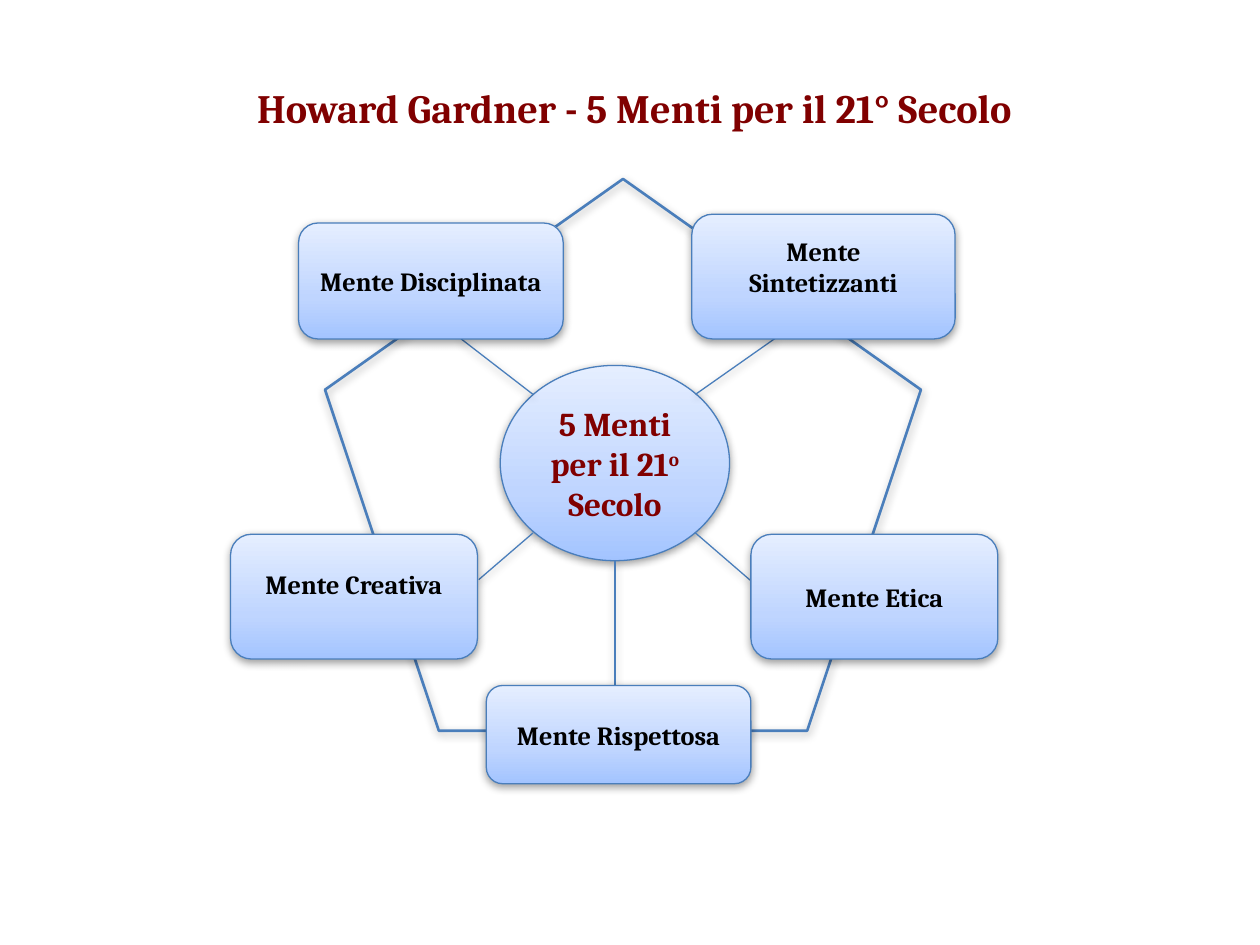
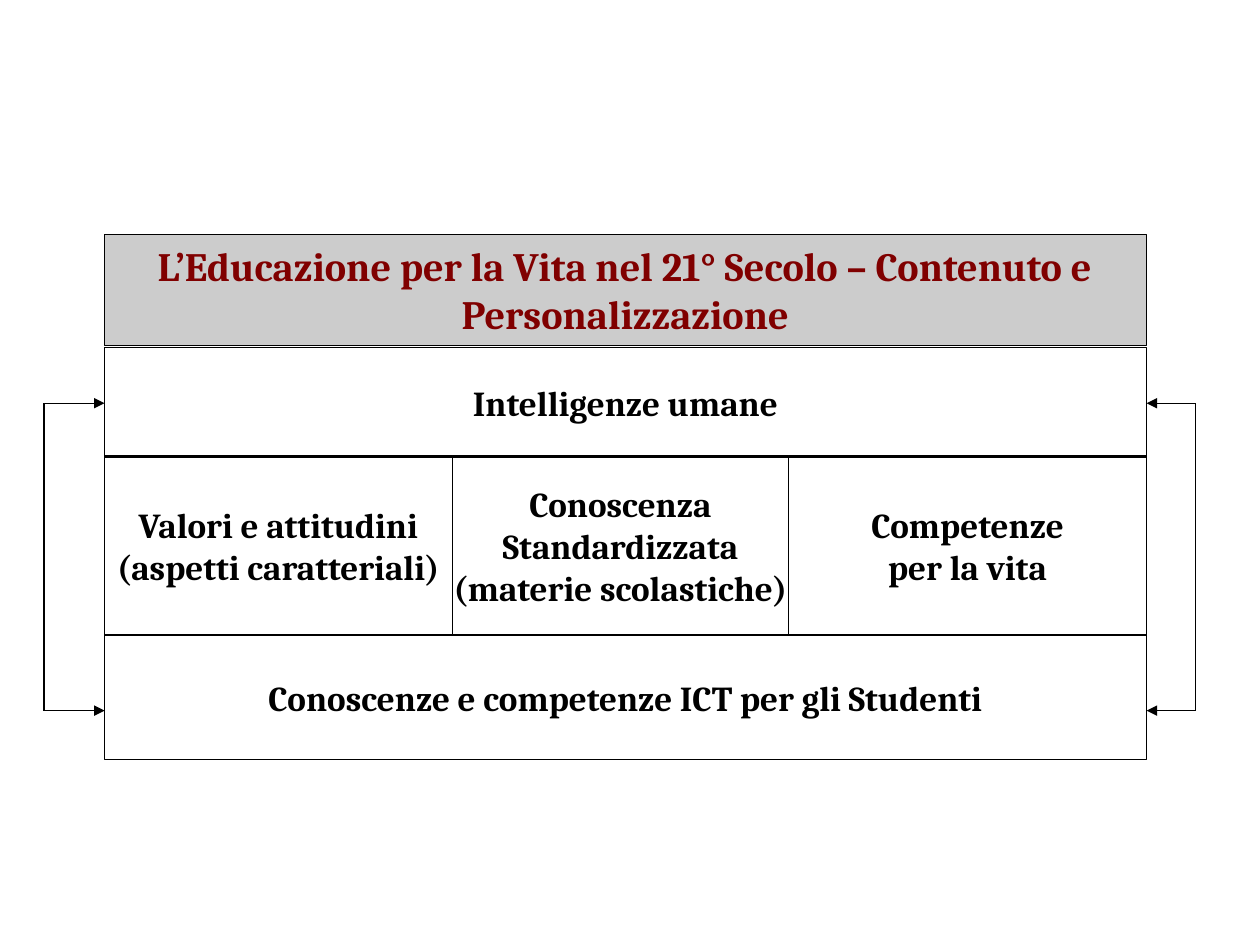
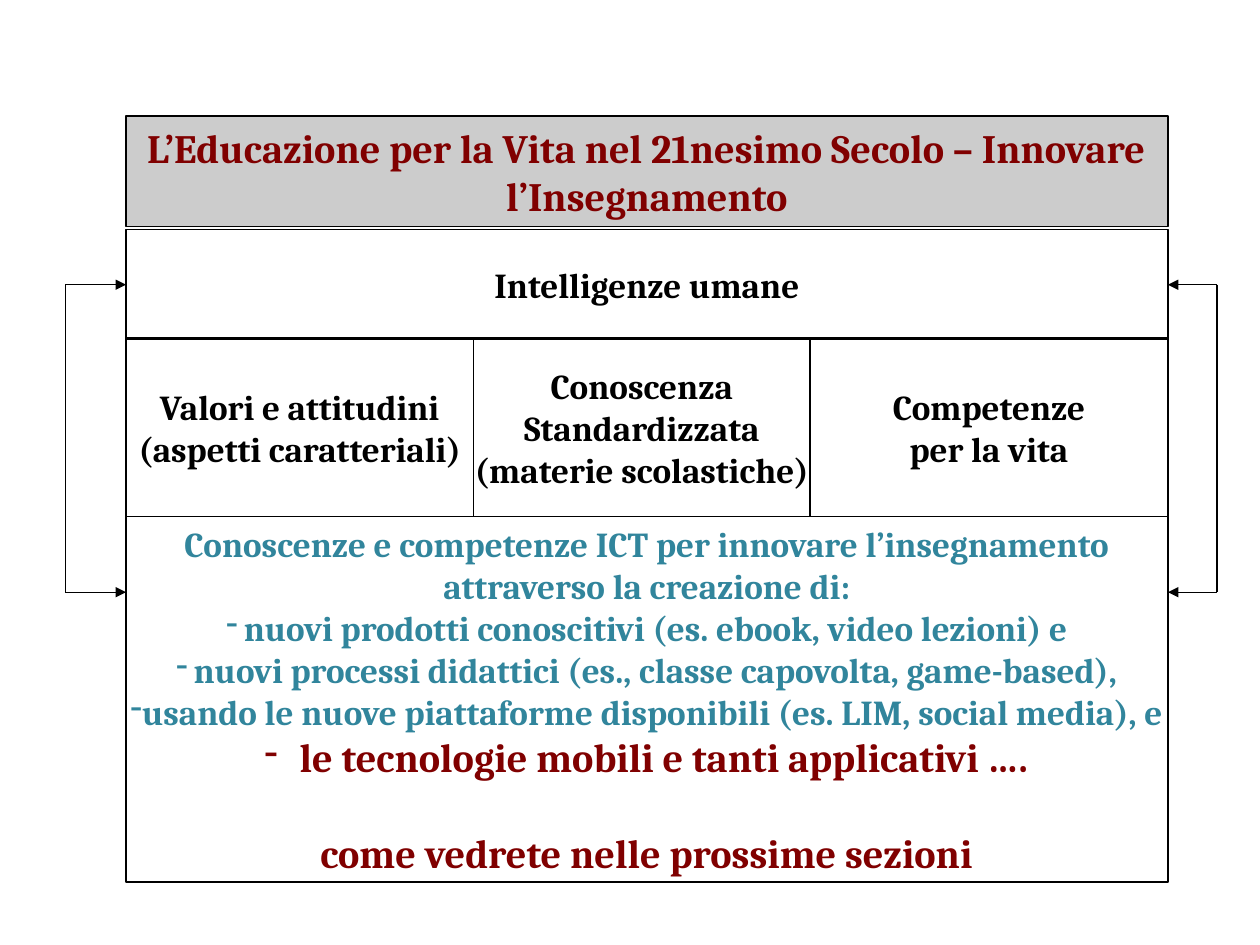
from copy import deepcopy
from typing import Any, NamedTuple

from lxml import etree
from pptx import Presentation
from pptx.dml.color import RGBColor
from pptx.enum.shapes import MSO_CONNECTOR, MSO_SHAPE
from pptx.enum.text import MSO_ANCHOR, MSO_AUTO_SIZE, PP_ALIGN
from pptx.oxml.ns import qn
from pptx.util import Inches, Pt

RECT = MSO_SHAPE.RECTANGLE
ROUND = MSO_SHAPE.ROUNDED_RECTANGLE
OVAL = MSO_SHAPE.OVAL
FIVE = MSO_SHAPE.REGULAR_PENTAGON
LINE = MSO_CONNECTOR.STRAIGHT
MID = MSO_ANCHOR.MIDDLE
TOP = MSO_ANCHOR.TOP
CENTER = PP_ALIGN.CENTER
FIXED = MSO_AUTO_SIZE.NONE

BLACK = RGBColor(0x00, 0x00, 0x00)
MAROON = RGBColor(0x80, 0x00, 0x00)
TEAL = RGBColor(0x31, 0x85, 0x9C)
GREY = RGBColor(0xCC, 0xCC, 0xCC)
BLUE = RGBColor(0x4A, 0x7E, 0xBB)
BLEND = [
    (0, RGBColor(0xA3, 0xC4, 0xFF)),
    (0.35, RGBColor(0xBF, 0xD5, 0xFF)),
    (1, RGBColor(0xE5, 0xEE, 0xFF)),
]

FONT = {"name": "Cambria", "bold": True}
FRAME = {"vertical_anchor": MID, "auto_size": FIXED, "word_wrap": True}
TITLE_SIZE = 23
CELL_SIZE = 20
MIND_SIZE = 15
WIDE = 8.27


class Box(NamedTuple):
    left: float
    top: float
    width: float
    height: float


class Row(NamedTuple):
    text: str
    size: float = CELL_SIZE
    color: RGBColor = BLACK
    indent: float = 0
    before: float = 0


class Mind(NamedTuple):
    box: Box
    text: str
    lift: float = 0


class Link(NamedTuple):
    x1: float
    y1: float
    x2: float
    y2: float


class Cell(NamedTuple):
    box: Box
    rows: list[Row]


class Panel(NamedTuple):
    left: float
    top: float
    title: str
    base: Cell


MINDS = [
    Mind(Box(2.37, 1.77, 2.1, 0.92), "Mente Disciplinata"),
    Mind(Box(5.49, 1.7, 2.09, 0.99), "Mente Sintetizzanti", 0.08),
    Mind(Box(5.96, 4.24, 1.96, 0.99), "Mente Etica"),
    Mind(Box(1.83, 4.24, 1.96, 0.99), "Mente Creativa", 0.1),
    Mind(Box(3.86, 5.44, 2.1, 0.78), "Mente Rispettosa"),
]
SPOKES = [
    Link(5.52, 3.13, 6.16, 2.68),
    Link(5.52, 4.23, 5.96, 4.61),
    Link(4.88, 4.45, 4.88, 5.44),
    Link(4.23, 3.13, 3.66, 2.69),
    Link(4.23, 4.23, 3.8, 4.6),
]
CELLS = [
    Cell(Box(0, 0.9, WIDE, 0.87), [Row("Intelligenze umane")]),
    Cell(Box(0, 1.76, 2.76, 1.42),
         [Row("Valori e attitudini"), Row("(aspetti caratteriali)")]),
    Cell(Box(2.76, 1.76, 2.67, 1.42),
         [Row("Conoscenza"), Row("Standardizzata"), Row("(materie scolastiche)")]),
    Cell(Box(5.43, 1.76, 2.84, 1.42), [Row("Competenze"), Row("per la vita")]),
]
PANELS = [
    Panel(0.83, 1.86,
          "L’Educazione per la Vita nel 21° Secolo – Contenuto e Personalizzazione",
          Cell(Box(0, 3.18, WIDE, 0.99),
               [Row("Conoscenze e competenze ICT per gli Studenti")])),
    Panel(1, 0.92,
          "L’Educazione per la Vita nel 21nesimo Secolo – Innovare l’Insegnamento",
          Cell(Box(0, 3.18, WIDE, 2.9), [
              Row("Conoscenze e competenze ICT per innovare l’insegnamento", color=TEAL),
              Row("attraverso la creazione di:", color=TEAL),
              Row("nuovi prodotti conoscitivi (es. ebook, video lezioni) e",
                  color=TEAL, indent=0.14),
              Row("nuovi processi didattici (es., classe capovolta, game-based),",
                  color=TEAL, indent=0.14),
              Row("usando le nuove piattaforme disponibili (es. LIM, social media), e",
                  color=TEAL, indent=0.08),
              Row("le tecnologie mobili e tanti applicativi ….",
                  TITLE_SIZE, MAROON, indent=0.28),
              Row("come vedrete nelle prossime sezioni", TITLE_SIZE, MAROON, before=27),
          ])),
]


def style(item: Any, values: dict) -> None:
    for name, value in values.items():
        setattr(item, name, value)


def place(box: Box) -> list:
    return [Inches(size) for size in box]


def write(para: Any, text: str, size: float, color: RGBColor) -> Any:
    para.alignment = CENTER
    run = para.add_run()
    run.text = text
    style(run.font, {**FONT, "size": Pt(size)})
    run.font.color.rgb = color
    return run


def stroke(item: Any, color: RGBColor, width: float) -> None:
    item.line.color.rgb = color
    item.line.width = Pt(width)


def shade(item: Any, alpha: int, drop: float) -> None:
    props = item._element.spPr
    effects = etree.SubElement(props, qn("a:effectLst"))
    if alpha:
        outer = etree.SubElement(
            effects, qn("a:outerShdw"), blurRad=str(Pt(5)), dist=str(Pt(drop)),
            dir="5400000", rotWithShape="0")
        black = etree.SubElement(outer, qn("a:srgbClr"), val=str(BLACK))
        etree.SubElement(black, qn("a:alpha"), val=str(alpha * 1000))


def blend(shape: Any) -> None:
    shape.fill.gradient()
    shape.fill.gradient_angle = 90
    stops = shape._element.spPr.find(".//" + qn("a:gsLst"))
    stops.append(deepcopy(stops[0]))
    for stop, (spot, color) in zip(shape.fill.gradient_stops, BLEND):
        stop.position = spot
        stop.color.rgb = color


def add_title(slide: Any, text: str, box: Box, anchor: Any) -> Any:
    title = slide.shapes.title
    style(title, dict(zip(("left", "top", "width", "height"), place(box))))
    style(title.text_frame, {**FRAME, "vertical_anchor": anchor})
    write(title.text_frame.paragraphs[0], text, TITLE_SIZE, MAROON)
    return title


def add_glow(slide: Any, kind: Any, box: Box) -> Any:
    shape = slide.shapes.add_shape(kind, *place(box))
    blend(shape)
    stroke(shape, BLUE, 0.75)
    shade(shape, 38, 1.6)
    style(shape.text_frame, FRAME)
    return shape


def add_link(slide: Any, link: Link, color: RGBColor, alpha: int = 0,
             arrow: bool = False) -> None:
    line = slide.shapes.add_connector(LINE, *[Inches(spot) for spot in link])
    stroke(line, color, 0.75)
    shade(line, alpha, 1.6)
    if arrow:
        etree.SubElement(line.line._get_or_add_ln(), qn("a:tailEnd"), type="triangle")


def add_row(para: Any, row: Row) -> None:
    if row.indent:
        props = para._p.get_or_add_pPr()
        props.set("marL", str(Inches(row.indent)))
        props.set("indent", str(-Inches(row.indent)))
        etree.SubElement(props, qn("a:buChar"), char="-")
    if row.before:
        para.space_before = Pt(row.before)
    write(para, row.text, row.size, row.color)


def add_cell(slide: Any, cell: Cell, left: float, top: float) -> None:
    box = cell.box._replace(left=left + cell.box.left, top=top + cell.box.top)
    shape = slide.shapes.add_shape(RECT, *place(box))
    shape.shadow.inherit = False
    shape.fill.background()
    stroke(shape, BLACK, 0.75)
    frame = shape.text_frame
    style(frame, {**FRAME, "word_wrap": False})
    for index, row in enumerate(cell.rows):
        add_row(frame.add_paragraph() if index else frame.paragraphs[0], row)


def add_minds(slide: Any) -> None:
    add_title(slide, "Howard Gardner - 5 Menti per il 21° Secolo",
              Box(0.67, 0.61, 8.74, 0.79), TOP)
    ring = slide.shapes.add_shape(FIVE, *place(Box(2.58, 1.42, 4.73, 4.38)))
    ring.fill.background()
    stroke(ring, BLUE, 1.5)
    shade(ring, 35, 1.8)

    hub = add_glow(slide, OVAL, Box(3.97, 2.9, 1.82, 1.55))
    para = hub.text_frame.paragraphs[0]
    for text, raised in (("5 Menti per il 21", False), ("o", True), (" Secolo", False)):
        run = write(para, text, 19, MAROON)
        if raised:
            run._r.get_or_add_rPr().set("baseline", "30000")

    for spoke in SPOKES:
        add_link(slide, spoke, BLUE, 38)
    for mind in MINDS:
        shape = add_glow(slide, ROUND, mind.box)
        shape.text_frame.margin_bottom = Inches(0.05 + 2 * mind.lift)
        write(shape.text_frame.paragraphs[0], mind.text, MIND_SIZE, BLACK)


def add_panel(slide: Any, panel: Panel) -> None:
    left, top = panel.left, panel.top
    title = add_title(slide, panel.title, Box(left, top, WIDE, 0.88), MID)
    title.fill.solid()
    title.fill.fore_color.rgb = GREY
    stroke(title, BLACK, 0.75)
    for cell in [*CELLS, panel.base]:
        add_cell(slide, cell, left, top)

    high, low = top + 1.34, top + 3.78
    for edge, reach in ((left, -0.48), (left + WIDE, 0.39)):
        outer = edge + reach
        for level in (high, low):
            add_link(slide, Link(outer, level, edge, level), BLACK, arrow=True)
        add_link(slide, Link(outer, high, outer, low), BLACK)


def main() -> None:
    deck = Presentation()
    style(deck, {"slide_width": Inches(10), "slide_height": Inches(7.5)})
    layout = deck.slide_layouts[5]
    add_minds(deck.slides.add_slide(layout))
    for panel in PANELS:
        add_panel(deck.slides.add_slide(layout), panel)
    deck.save("out.pptx")


if __name__ == "__main__":
    main()
